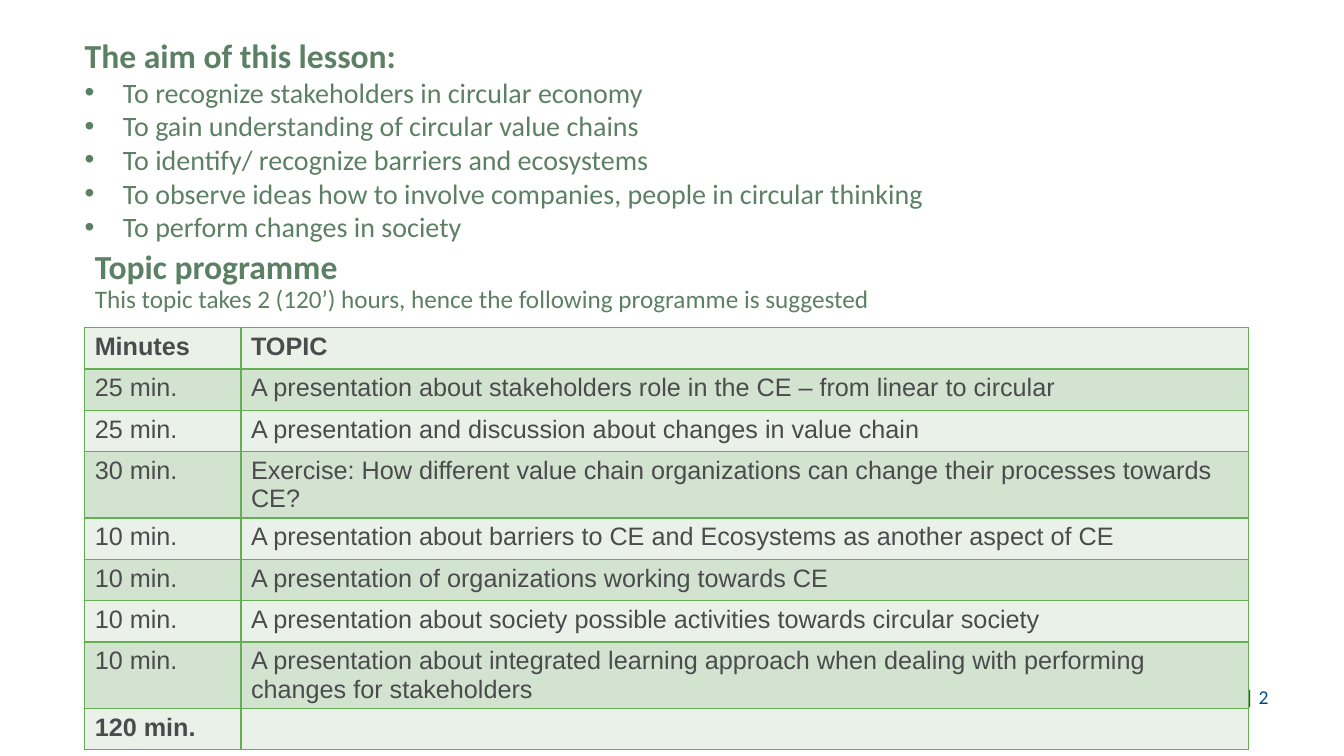
from lxml import etree
from pptx import Presentation
from pptx.dml.color import RGBColor
from pptx.enum.text import MSO_ANCHOR as Anchor, MSO_AUTO_SIZE as AutoSize, PP_ALIGN as Align
from pptx.oxml.ns import qn
from pptx.util import Inches, Pt

GREEN, GREY, BLUE = "5C8064", "4B4B4D", "004E84"
BORDER, BANDS = "64AE53", ("EAF1E9", "D2E3CF")

AIMS = [
    "To recognize stakeholders in circular economy",
    "To gain understanding of circular value chains",
    "To identify/ recognize barriers and ecosystems",
    "To observe ideas how to involve companies, people in circular thinking",
    "To perform changes in society",
]
PROGRAMME = [
    ("Minutes", "TOPIC"),
    ("25 min.", "A presentation about stakeholders role in the CE – from linear to circular"),
    ("25 min.", "A presentation and discussion about changes in value chain"),
    ("30 min.", "Exercise: How different value chain organizations can change their processes towards CE?"),
    ("10 min.", "A presentation about barriers to CE and Ecosystems as another aspect of CE"),
    ("10 min.", "A presentation of organizations working towards CE"),
    ("10 min.", "A presentation about society possible activities towards circular society"),
    ("10 min.", "A presentation about integrated learning approach when dealing with "
                "performing changes for stakeholders"),
    ("120 min.", ""),
]


def rgb(color):
    return RGBColor.from_string(color)


class LessonSlide:
    """Holds the page and the text style shared by its elements."""

    def __init__(self, page, font="Calibri", color=GREEN):
        self.page, self.font, self.color = page, font, color

    def style(self, font, size, bold=False, color=None, name=None):
        font.name, font.size, font.bold = name or self.font, Pt(size), bold
        font.color.rgb = rgb(color or self.color)

    def frame(self, box, place, insets=(0, 0), anchor=Anchor.TOP):
        """Place a box and return its text frame, ready for text."""
        box.left, box.top, box.width, box.height = map(Inches, place)
        frame = box.text_frame
        frame.word_wrap, frame.auto_size = True, AutoSize.NONE
        frame.vertical_anchor = anchor
        frame.margin_left = frame.margin_right = Inches(insets[0])
        frame.margin_top = frame.margin_bottom = Inches(insets[1])
        return frame

    def text_box(self, place, **options):
        box = self.page.shapes.add_textbox(*map(Inches, place))
        return self.frame(box, place, **options)

    def line(self, frame, text, size, bold=False, spacing=None):
        """Write the next paragraph, using the first one while it is empty."""
        para = frame.paragraphs[0] if not frame.text else frame.add_paragraph()
        para.text, para.alignment = text, Align.LEFT
        para.line_spacing = spacing
        self.style(para.font, size, bold)
        return para

    def bullet(self, frame, text, size):
        props = self.line(frame, text, size)._p.get_or_add_pPr()
        indent = Inches(0.38)
        props.set("marL", str(indent))
        props.set("indent", str(-indent))
        font = etree.Element(qn("a:buFont"), typeface="Arial")
        mark = etree.Element(qn("a:buChar"), char="•")
        default = props.find(qn("a:defRPr"))
        default.addprevious(font)
        default.addprevious(mark)

    def title(self, place, heading, note):
        frame = self.frame(self.page.shapes.title, place, insets=(0.1, 0.05))
        self.line(frame, heading, 24, bold=True, spacing=0.9)
        self.line(frame, note, 18, spacing=0.9)

    def page_number(self, place, number):
        para = self.text_box(place, anchor=Anchor.MIDDLE).paragraphs[0]
        for text, color in (("| ", GREY), (number, BLUE)):
            span = para.add_run()
            span.text = text
            self.style(span.font, 14, color=color)

    def aims(self, place, heading, items):
        frame = self.text_box(place)
        self.line(frame, heading, 24, bold=True, spacing=1.04)
        for item in items:
            self.bullet(frame, item, 20)

    def borders(self, cell):
        props = cell._tc.get_or_add_tcPr()
        for index, side in enumerate(("lnL", "lnR", "lnT", "lnB")):
            edge = etree.Element(qn(f"a:{side}"), w=str(Pt(1)))
            fill = etree.SubElement(edge, qn("a:solidFill"))
            etree.SubElement(fill, qn("a:srgbClr"), val=BORDER)
            props.insert(index, edge)

    def table(self, left, top, widths, row_height, rows):
        shape = self.page.shapes.add_table(
            len(rows), len(widths), Inches(left), Inches(top),
            Inches(sum(widths)), Inches(row_height * len(rows)))
        table = shape.table
        table.first_row = table.horz_banding = False
        for column, width in zip(table.columns, widths):
            column.width = Inches(width)
        for index, texts in enumerate(rows):
            table.rows[index].height = Inches(row_height)
            for cell, text in zip(table.rows[index].cells, texts):
                cell.text = text
                cell.fill.solid()
                cell.fill.fore_color.rgb = rgb(BANDS[index % 2])
                self.borders(cell)
                bold = index in (0, len(rows) - 1)
                self.style(cell.text_frame.paragraphs[0].font, 18, bold, GREY, "Arial")


def main():
    deck = Presentation()
    deck.slide_width, deck.slide_height = Inches(13.33), Inches(7.5)
    lesson = LessonSlide(deck.slides.add_slide(deck.slide_layouts[5]))
    lesson.page_number((12.35, 6.79, 0.68, 0.24), "2")
    lesson.title((0.84, 2.43, 10.93, 1.35), "Topic programme",
                 "This topic takes 2 (120’) hours, hence the following programme is suggested")
    lesson.table(0.84, 3.25, (1.55, 9.99), 0.41, PROGRAMME)
    lesson.aims((0.84, 0.33, 11.57, 2.09), "The aim of this lesson:", AIMS)
    deck.save("out.pptx")


if __name__ == "__main__":
    main()
